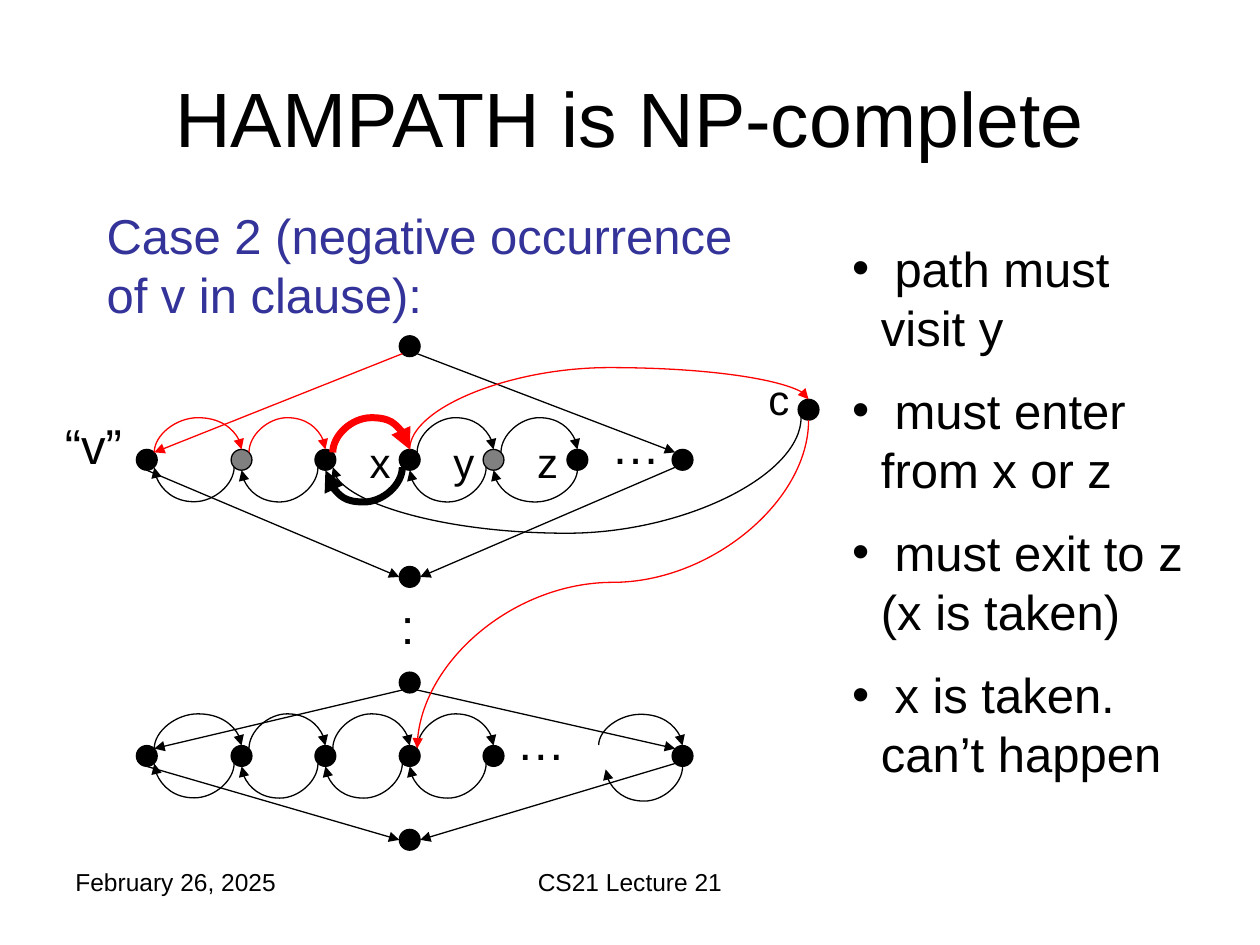
from lxml.etree import SubElement
from pptx import Presentation
from pptx.dml.color import RGBColor
from pptx.enum.shapes import MSO_CONNECTOR, MSO_SHAPE
from pptx.enum.text import MSO_ANCHOR, MSO_AUTO_SIZE, PP_ALIGN
from pptx.oxml.ns import qn
from pptx.util import Cm, Pt

BLACK = RGBColor(0, 0, 0)
GRAY = RGBColor(0x80, 0x80, 0x80)
RED = RGBColor(0xFF, 0, 0)
INDIGO = RGBColor(0x33, 0x33, 0x99)

RADIUS = 0.21
EDGE = 0.15
BEND = 0.85
COLUMNS = [2.96, 4.87, 6.56, 8.26, 9.95]
LAST = 13.76
MIDDLE = COLUMNS[3]
ROW_V = 9.27
ROW_NEXT = 15.24
Z_NODE = 11.64
CLAUSE = (16.3, 8.26)
THIN, THICK = 0.75, 4


class Slide:
    font = "Arial"

    def __init__(self, deck):
        self.page = deck.slides.add_slide(deck.slide_layouts[6])

    def apply(self, target, values):
        for name, value in values.items():
            setattr(target, name, value)

    def text(self, lines, left, top, width, height, size=28, color=BLACK,
             align=PP_ALIGN.LEFT, anchor=MSO_ANCHOR.TOP, grow=True, bullet=False):
        box = self.page.shapes.add_textbox(Cm(left), Cm(top), Cm(width), Cm(height))
        frame = box.text_frame
        fit = MSO_AUTO_SIZE.SHAPE_TO_FIT_TEXT if grow else MSO_AUTO_SIZE.NONE
        self.apply(frame, {"word_wrap": True, "vertical_anchor": anchor, "auto_size": fit})
        for index, line in enumerate(lines):
            para = frame.paragraphs[0] if index == 0 else frame.add_paragraph()
            para.alignment = align
            span = para.add_run()
            span.text = line
            self.apply(span.font, {"name": self.font, "size": Pt(size)})
            span.font.color.rgb = color
            properties = para._p.get_or_add_pPr()
            if grow:
                space = SubElement(properties, qn("a:spcBef"))
                SubElement(space, qn("a:spcPct"), val="50000")
            if bullet:
                properties.set("marL", str(Cm(0.58)))
                properties.set("indent", str(Cm(-0.58)))
                SubElement(properties, qn("a:buFont"), typeface=self.font)
                SubElement(properties, qn("a:buChar"), char="•")

    def node(self, x, y, fill=BLACK):
        dot = self.page.shapes.add_shape(
            MSO_SHAPE.OVAL, Cm(x - RADIUS), Cm(y - RADIUS), Cm(2 * RADIUS), Cm(2 * RADIUS))
        dot.shadow.inherit = False
        dot.fill.solid()
        dot.fill.fore_color.rgb = fill
        dot.line.color.rgb = BLACK
        dot.line.width = Pt(THIN)

    def arrow(self, start, end, color=BLACK, width=THIN, kind=MSO_CONNECTOR.STRAIGHT):
        link = self.page.shapes.add_connector(kind, *(Cm(value) for value in (*start, *end)))
        link.line.color.rgb = color
        link.line.width = Pt(width)
        SubElement(link.line._get_or_add_ln(), qn("a:tailEnd"), type="triangle")
        SubElement(link._element.spPr, qn("a:effectLst"))
        return link

    def curve(self, start, end, bend, color=BLACK, width=THIN):
        link = self.arrow(start, end, color, width, MSO_CONNECTOR.CURVE)
        across = end[0] - start[0]
        down = end[1] - start[1] or 0.01
        long_side, short_side = abs(across), abs(down)
        self.apply(link, {
            "left": Cm((start[0] + end[0] - short_side) / 2),
            "top": Cm((start[1] + end[1] - long_side) / 2),
            "width": Cm(short_side),
            "height": Cm(long_side),
        })
        frame = link._element.spPr.find(qn("a:xfrm"))
        for flip in ("flipH", "flipV"):
            frame.attrib.pop(flip, None)
        frame.set("rot", "5400000" if down > 0 else "16200000")
        if across * down > 0:
            frame.set("flipV", "1")
        geometry = link._element.spPr.find(qn("a:prstGeom"))
        geometry.set("prst", "curvedConnector3")
        values = geometry.find(qn("a:avLst"))
        if values is None:
            values = SubElement(geometry, qn("a:avLst"))
        ratio = round((bend - start[1]) / down * 100000)
        SubElement(values, qn("a:gd"), name="adj1", fmla=f"val {ratio}")

    def upper_arc(self, left, right, y, color=BLACK, width=THIN):
        self.curve((left + EDGE, y - EDGE), (right, y - RADIUS), y - BEND, color, width)

    def diamond(self, y, top, bottom, fills, entry=BLACK, uppers=(), thick_lower=None):
        for x, fill in zip([*COLUMNS, LAST], fills):
            self.node(x, y, fill)
        self.node(MIDDLE, top)
        self.node(MIDDLE, bottom)
        first = COLUMNS[0]
        self.arrow((MIDDLE - EDGE, top + EDGE), (first + EDGE, y - EDGE), entry)
        self.arrow((MIDDLE + EDGE, top + EDGE), (LAST - EDGE, y - EDGE))
        self.arrow((first, y + RADIUS), (MIDDLE - RADIUS, bottom))
        self.arrow((LAST - EDGE, y + EDGE), (MIDDLE + RADIUS, bottom))
        for index, (left, right) in enumerate(zip(COLUMNS, COLUMNS[1:])):
            style = uppers[index] if index < len(uppers) else (BLACK, THIN)
            self.upper_arc(left, right, y, *style)
            end = (left, y + RADIUS) if index else (left + EDGE, y + EDGE)
            width = THICK if index == thick_lower else THIN
            self.curve((right - EDGE, y + EDGE), end, y + BEND, width=width)


def main():
    deck = Presentation()
    deck.slide_width, deck.slide_height = Cm(25.4), Cm(19.05)
    slide = Slide(deck)

    slide.text(["February 26, 2025"], 1.27, 17.35, 5.92, 1.32, size=14, grow=False)
    slide.text(["CS21 Lecture 21"], 8.68, 17.35, 8.04, 1.32, size=14,
               align=PP_ALIGN.CENTER, grow=False)
    slide.text(["HAMPATH is NP-complete"], 1.27, 0.76, 22.86, 3.18, size=44,
               align=PP_ALIGN.CENTER, anchor=MSO_ANCHOR.MIDDLE, grow=False)

    slide.diamond(ROW_V, 6.98, 11.63, [BLACK, GRAY, BLACK, BLACK, GRAY, BLACK], RED,
                  [(RED, THIN), (RED, THIN), (RED, THICK)], thick_lower=2)
    slide.node(Z_NODE, ROW_V)
    slide.upper_arc(COLUMNS[4], Z_NODE, ROW_V)
    slide.curve((Z_NODE, ROW_V + 0.19), (COLUMNS[4], ROW_V + RADIUS), ROW_V + BEND)

    slide.diamond(ROW_NEXT, 13.76, 16.93, [BLACK] * 6)
    slide.curve((12.07, 15.02), (LAST, 15.03), 14.4)
    slide.curve((LAST, ROW_NEXT + RADIUS), (12.21, 15.51), 16.15)

    slide.node(*CLAUSE)
    x, y = CLAUSE
    slide.curve((MIDDLE, ROW_V - RADIUS), (x, y - RADIUS), 7.41, RED)
    slide.curve((x, y + RADIUS), (MIDDLE + EDGE, ROW_NEXT - EDGE), 11.74, RED)
    slide.curve((x - EDGE, y + EDGE), (COLUMNS[2] + EDGE, ROW_V + EDGE), 10.75)

    for label, left, top, width in [("…", 12.07, 8.26, 1.9), ("…", 10.16, 14.22, 1.9),
                                    (":", 7.83, 11.88, 1.06), ("“v”", 1.06, 8.26, 1.9)]:
        slide.text([label], left, top, width, 1.45)
    for label, left, top in [("c", 15.24, 7.41), ("x", 7.2, 8.68),
                             ("y", 8.89, 8.68), ("z", 10.58, 8.68)]:
        slide.text([label], left, top, 0.85, 1.27, size=24)
    slide.text(["Case 2 (negative occurrence of v in clause):"], 1.9, 4.02, 13.34, 2.62,
               color=INDIGO)
    slide.text([" path must visit y", " must enter from x or z",
                " must exit to z (x is taken)", " x is taken. can’t happen"],
               16.93, 4.68, 7.41, 11.53, bullet=True)
    deck.save("out.pptx")


if __name__ == "__main__":
    main()
